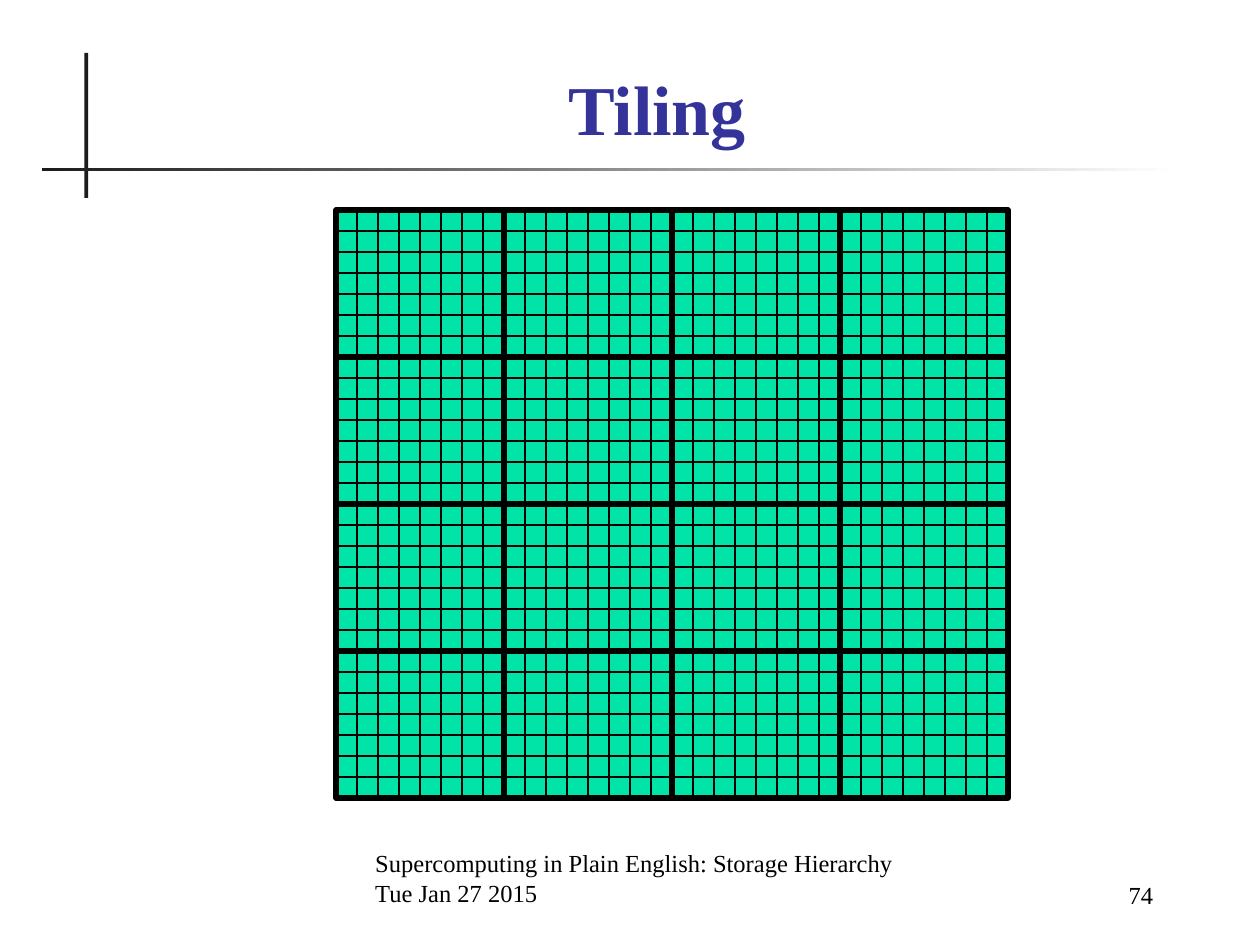
from dataclasses import dataclass

from lxml import etree
from pptx import Presentation
from pptx.dml.color import RGBColor
from pptx.enum.shapes import MSO_CONNECTOR, MSO_SHAPE
from pptx.enum.text import MSO_ANCHOR, MSO_AUTO_SIZE, PP_ALIGN
from pptx.oxml.ns import qn
from pptx.util import Inches, Pt

RECT = MSO_SHAPE.RECTANGLE
LINE = MSO_CONNECTOR.STRAIGHT
BOTTOM = MSO_ANCHOR.BOTTOM
NO_FIT = MSO_AUTO_SIZE.NONE
LEFT, CENTER, RIGHT = PP_ALIGN.LEFT, PP_ALIGN.CENTER, PP_ALIGN.RIGHT

FONT = "Times New Roman"
COLORS = {"ink": "000000", "bar": "1C1C1C", "paper": "FFFFFF",
          "title": "333399", "grid": "00E4A8"}

CELL = 1 / 6
GRID_X, GRID_Y = 16 * CELL, 10 * CELL
TILES = 4
TILE_COLS, TILE_ROWS = 8, 7
COLS, ROWS = TILES * TILE_COLS, TILES * TILE_ROWS
THIN, THICK = 0.75, 3


@dataclass
class Box:
    x: float
    y: float
    w: float
    h: float

    def frame(self) -> list:
        return [Inches(v) for v in (self.x, self.y, self.w, self.h)]


@dataclass
class Label:
    box: Box
    lines: list[str]
    align: PP_ALIGN


BARS = [
    (Box(0.67, 0.42, 0.03, 1.15), ["bar"]),
    (Box(0.33, 1.33, 9, 0.03), ["bar", "paper"]),
    (Box(6.92, 6.67, 0.17, 0.83), ["paper"]),
]
LABELS = [
    Label(Box(2.88, 6.75, 4.37, 0.5),
          ["Supercomputing in Plain English: Storage Hierarchy",
           "Tue Jan 27 2015"], LEFT),
    Label(Box(7.83, 6.77, 1.42, 0.5), ["74"], RIGHT),
]


def color(name: str) -> RGBColor:
    return RGBColor.from_string(COLORS[name])


def write(shape, label: Label, size: int, tint: str, bold: bool = False) -> None:
    frame = shape.text_frame
    layout = {"word_wrap": True, "auto_size": NO_FIT, "vertical_anchor": BOTTOM}
    for key, value in layout.items():
        setattr(frame, key, value)
    frame.text = "\n".join(label.lines)
    style = {"name": FONT, "size": Pt(size), "bold": bold}
    for para in frame.paragraphs:
        para.alignment = label.align
        for key, value in style.items():
            setattr(para.font, key, value)
        para.font.color.rgb = color(tint)


def add_rect(shapes, box: Box, fills: list[str], width: float = 0) -> None:
    """Fill with none, one colour, or a left-to-right blend of two."""
    rect = shapes.add_shape(RECT, *box.frame())
    rect.shadow.inherit = False
    if not fills:
        rect.fill.background()
    elif len(fills) == 1:
        rect.fill.solid()
        rect.fill.fore_color.rgb = color(fills[0])
    else:
        rect.fill.gradient()
        rect.fill.gradient_angle = 0
        for spot, (stop, name) in enumerate(zip(rect.fill.gradient_stops, fills)):
            stop.position = spot
            stop.color.rgb = color(name)
    if width:
        rect.line.color.rgb = color("ink")
        rect.line.width = Pt(width)
    else:
        rect.line.fill.background()


def add_line(shapes, x: float, y: float, w: float, h: float) -> None:
    ends = [Inches(v) for v in (x, y, x + w, y + h)]
    line = shapes.add_connector(LINE, *ends)
    line.line.color.rgb = color("ink")
    line.line.width = Pt(THIN)
    etree.SubElement(line._element.spPr, qn("a:effectLst"))


def add_grid(shapes) -> None:
    wide, high = COLS * CELL, ROWS * CELL
    add_rect(shapes, Box(GRID_X, GRID_Y, wide, high), ["grid"], THIN)
    for col in range(1, COLS):
        add_line(shapes, GRID_X + col * CELL, GRID_Y, 0, high)
    for row in range(1, ROWS):
        add_line(shapes, GRID_X, GRID_Y + row * CELL, wide, 0)


def add_tiles(shapes) -> None:
    wide, high = TILE_COLS * CELL, TILE_ROWS * CELL
    for row in range(TILES):
        for col in range(TILES):
            box = Box(GRID_X + col * wide, GRID_Y + row * high, wide, high)
            add_rect(shapes, box, [], THICK)


def main() -> None:
    deck = Presentation()
    deck.slide_width, deck.slide_height = Inches(10), Inches(7.5)
    slide = deck.slides.add_slide(deck.slide_layouts[5])
    shapes = slide.shapes

    for box, fills in BARS:
        add_rect(shapes, box, fills)
    for label in LABELS:
        write(shapes.add_textbox(*label.box.frame()), label, 14, "ink")

    head = Label(Box(0.83, 0.5, 8.77, 0.74), ["Tiling"], CENTER)
    title = shapes.title
    title.left, title.top, title.width, title.height = head.box.frame()
    write(title, head, 40, "title", bold=True)

    group = shapes.add_group_shape()
    add_grid(group.shapes)
    add_tiles(group.shapes)
    deck.save("out.pptx")


if __name__ == "__main__":
    main()
